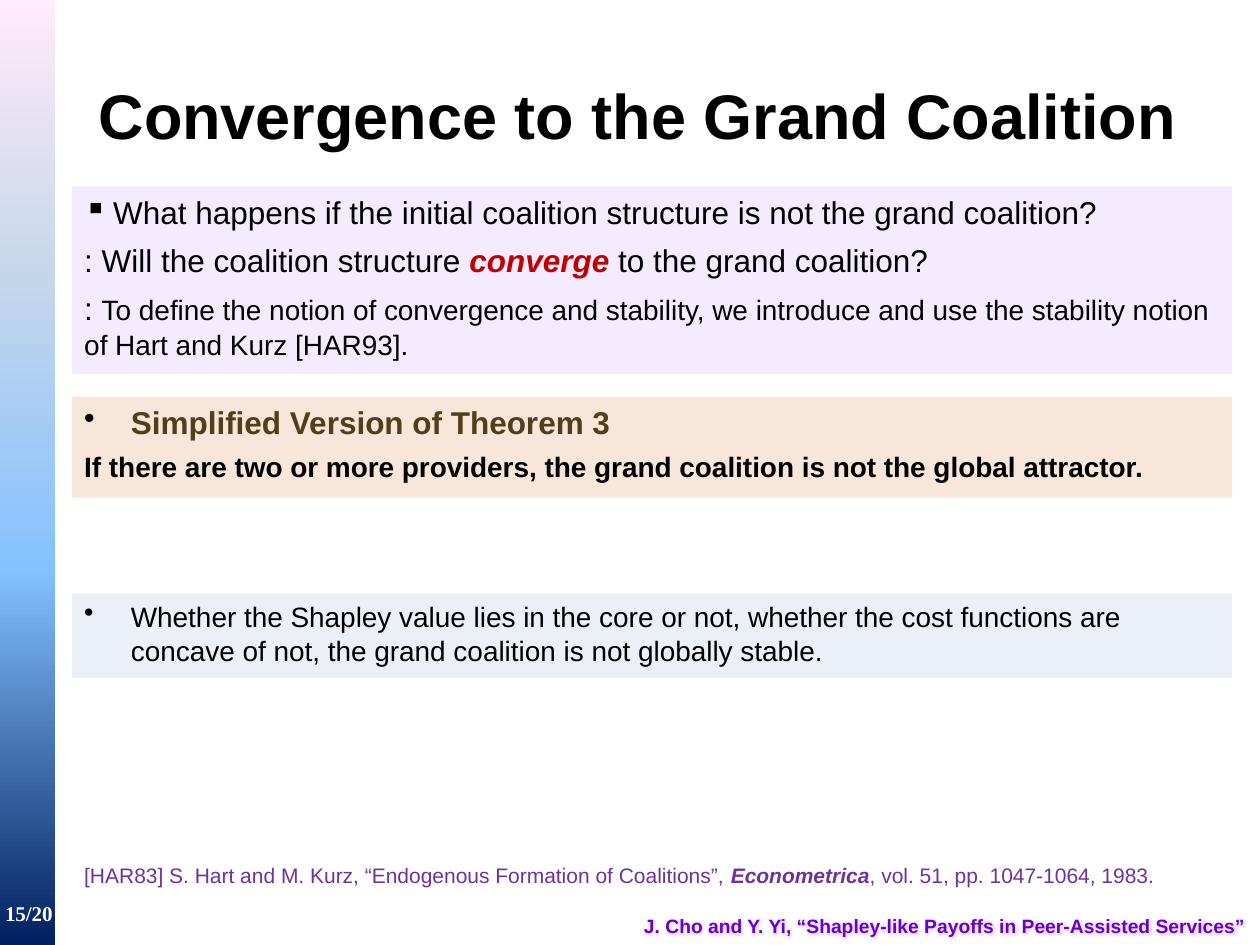
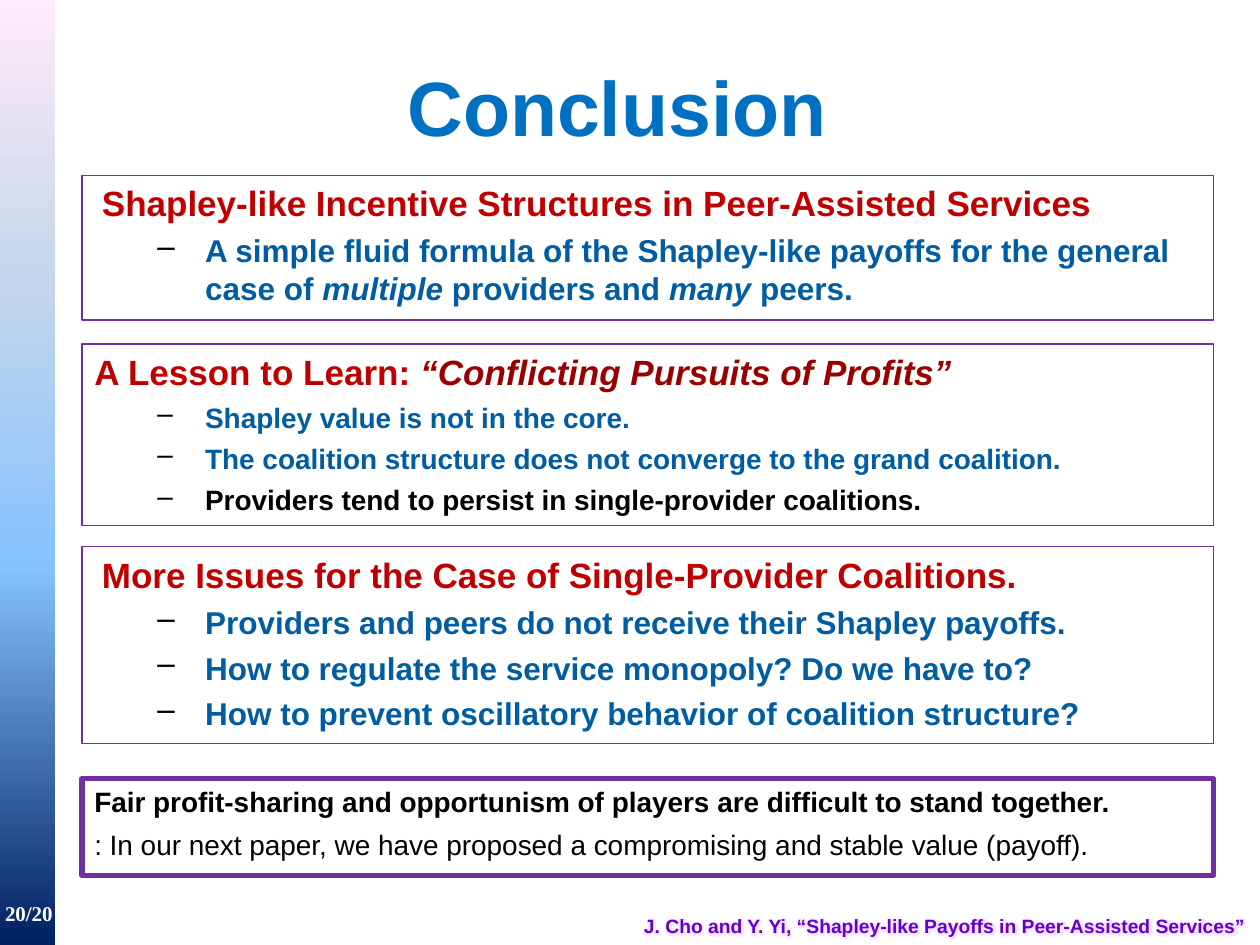
"""Builds two talk slides on coalitions: convergence and conclusion."""
from lxml import etree
from pptx import Presentation
from pptx import util as u
from pptx.dml import color
from pptx.enum import shapes, text
from pptx.oxml import ns

COLORS = {
    "black": "000000", "white": "FFFFFF", "red": "C00000", "maroon": "990000",
    "blue": "0070C0", "navy": "005DA2", "purple": "7030A0", "violet": "6600CC",
    "brown": "513E1B", "lilac": "F5EBFF", "peach": "F8E6DA", "ice": "EAF0F6",
    "glow": "E3B5FF",
}
BAND_STOPS = [(0, "002060"), (40, "85C2FF"), (70, "C4D6EB"), (100, "FFEBFA")]
FOOTER = "J. Cho and Y. Yi, “Shapley-like Payoffs in Peer-Assisted Services”"

PLAIN = {"margin": 0, "indent": 0, "before": 5}
SPACED = {**PLAIN, "before": 6}
SQUARE = {"margin": 0.23, "indent": -0.23, "before": 6, "bullet": "▪"}
DOT = {"margin": 0.37, "indent": -0.37, "before": 5, "bullet": "•"}
HEADING = {"margin": 0.44, "indent": -0.38, "before": 5}
LESSON = {"margin": 0.42, "indent": -0.42, "before": 5}
DASH = {"margin": 0.88, "indent": -0.38, "before": 4.5, "bullet": "–", "level": 1}


def run(words, size, tint="black", bold=False, italic=False, font="Arial"):
    return words, size, tint, bold, italic, font


def heading(words):
    return HEADING, [run(words, 20, "red", True)]


def point(words, size, tint="navy"):
    return DASH, [run(words, size, tint, True)]


CONVERGENCE = {
    "page": "15/20",
    "title": ("Convergence to the Grand Coalition", 36, "black", (0.5, 0.53, 9.12, 0.76)),
    "left": 0.57, "width": 9.21,
    "panels": [
        {"top": 1.48, "height": 1.49, "fill": "lilac", "lines": [
            (SQUARE, [run("What happens if the initial coalition structure is not the grand coalition?", 18)]),
            (SPACED, [run(": Will the coalition structure ", 18),
                      run("converge", 18, "red", True, True),
                      run(" to the grand coalition?", 18)]),
            (SPACED, [run(": ", 18),
                      run("To define the notion of convergence and stability, we introduce and use "
                          "the stability notion of Hart and Kurz [HAR93].", 16)]),
        ]},
        {"top": 3.15, "height": 0.8, "fill": "peach", "lines": [
            (DOT, [run("Simplified Version of Theorem 3", 18, "brown", True)]),
            (PLAIN, [run("If there are two or more providers, the grand coalition is not "
                         "the global attractor.", 16, bold=True)]),
        ]},
        {"top": 4.71, "height": 0.67, "fill": "ice", "lines": [
            (DOT, [run("Whether the Shapley value lies in the core or not, whether the cost functions "
                       "are concave of not, the grand coalition is not globally stable.", 16)]),
        ]},
    ],
    "reference": [
        run("[HAR83] S. Hart and M. Kurz, “Endogenous Formation of Coalitions”, ", 12, "purple"),
        run("Econometrica", 12, "purple", True, True),
        run(", vol. 51, pp. 1047-1064, 1983.", 12, "purple"),
    ],
}
CONCLUSION = {
    "page": "20/20",
    "title": ("Conclusion", 44, "blue", (0.75, 0.51, 8.3, 0.65)),
    "left": 0.65, "width": 8.98,
    "panels": [
        {"top": 1.39, "height": 1.15, "border": 0.75, "lines": [
            heading("Shapley-like Incentive Structures in Peer-Assisted Services"),
            (DASH, [run("A simple fluid formula of the Shapley-like payoffs for the general case of ",
                        18, "navy", True),
                    run("multiple", 18, "navy", True, True),
                    run(" providers and ", 18, "navy", True),
                    run("many", 18, "navy", True, True),
                    run(" peers.", 18, "navy", True)]),
        ]},
        {"top": 2.73, "height": 1.44, "border": 0.75, "lines": [
            (LESSON, [run("A Lesson to Learn: ", 20, "red", True),
                      run("“Conflicting Pursuits of Profits”", 20, "maroon", True, True)]),
            point("Shapley value is not in the core.", 16),
            point("The coalition structure does not converge to the grand coalition.", 16),
            point("Providers tend to persist in single-provider coalitions.", 16, "black"),
        ]},
        {"top": 4.34, "height": 1.56, "border": 0.75, "lines": [
            heading("More Issues for the Case of Single-Provider Coalitions."),
            point("Providers and peers do not receive their Shapley payoffs.", 18),
            point("How to regulate the service monopoly? Do we have to?", 18),
            point("How to prevent oscillatory behavior of coalition structure?", 18),
        ]},
        {"top": 6.18, "height": 0.77, "border": 3, "lines": [
            (PLAIN, [run("Fair profit-sharing and opportunism of players are difficult to stand "
                         "together.", 16, bold=True)]),
            (PLAIN, [run(": In our next paper, we have proposed a compromising and stable value "
                         "(payoff).", 16)]),
        ]},
    ],
}


def rgb(name):
    return color.RGBColor.from_string(COLORS[name])


def add_xml(parent, tag, **attributes):
    return etree.SubElement(parent, ns.qn(tag), attributes)


def write(holder, lines, align=text.PP_ALIGN.LEFT, anchor=text.MSO_ANCHOR.TOP):
    frame = holder.text_frame
    frame.word_wrap = True
    frame.vertical_anchor = anchor
    for position, (style, runs) in enumerate(lines):
        paragraph = frame.add_paragraph() if position else frame.paragraphs[0]
        properties = paragraph._p.get_or_add_pPr()
        properties.set("marL", str(u.Inches(style["margin"])))
        properties.set("indent", str(u.Inches(style["indent"])))
        if "bullet" in style:
            add_xml(add_xml(properties, "a:buClr"), "a:srgbClr", val=COLORS["black"])
            add_xml(properties, "a:buChar", char=style["bullet"])
        paragraph.level = style.get("level", 0)
        paragraph.alignment = align
        paragraph.space_before = u.Pt(style["before"] if position else 0)
        for words, size, tint, bold, italic, font in runs:
            part = paragraph.add_run()
            part.text = words
            part.font.size = u.Pt(size)
            part.font.bold = bold
            part.font.italic = italic
            part.font.name = font
            part.font.color.rgb = rgb(tint)


def add_label(slide, place, runs, align=text.PP_ALIGN.LEFT, anchor=text.MSO_ANCHOR.TOP):
    label = slide.shapes.add_textbox(*map(u.Inches, place))
    write(label, [(PLAIN, runs)], align, anchor)
    return label


def add_box(slide, *place):
    box = slide.shapes.add_shape(shapes.MSO_SHAPE.RECTANGLE, *map(u.Inches, place))
    box.shadow.inherit = False
    box.line.fill.background()
    return box


def add_band(slide):
    band = add_box(slide, 0, 0, 0.44, 7.5)
    band.fill.gradient()
    band.fill.gradient_angle = 90
    stops = band._element.spPr.find(".//" + ns.qn("a:gsLst"))
    stops.clear()
    for percent, tint in BAND_STOPS:
        stop = add_xml(stops, "a:gs", pos=str(percent * 1000))
        add_xml(stop, "a:srgbClr", val=tint)


def add_footer(slide):
    footer = add_label(slide, (5, 7.21, 5, 0.29), [run(FOOTER, 11, "violet", True)],
                       text.PP_ALIGN.CENTER)
    properties = footer.text_frame.paragraphs[0].runs[0]._r.rPr
    effects = etree.Element(ns.qn("a:effectLst"))
    glow = add_xml(effects, "a:glow", rad=str(u.Pt(4)))
    tint = add_xml(glow, "a:srgbClr", val=COLORS["glow"])
    add_xml(tint, "a:alpha", val="40000")
    properties.find(ns.qn("a:solidFill")).addnext(effects)


def add_panel(slide, left, width, panel):
    box = add_box(slide, left, panel["top"], width, panel["height"])
    if "fill" in panel:
        box.fill.solid()
        box.fill.fore_color.rgb = rgb(panel["fill"])
    else:
        box.fill.background()
        box.line.color.rgb = rgb("purple")
        box.line.width = u.Pt(panel["border"])
    write(box, panel["lines"])


def build_slide(deck, content):
    slide = deck.slides.add_slide(deck.slide_layouts[6])
    add_band(slide)
    add_label(slide, (-0.12, 7.1, 0.7, 0.25),
              [run(content["page"], 12, "white", True, font="Times New Roman")],
              text.PP_ALIGN.CENTER)
    add_footer(slide)
    words, size, tint, place = content["title"]
    add_label(slide, place, [run(words, size, tint, True)],
              text.PP_ALIGN.CENTER, text.MSO_ANCHOR.MIDDLE)
    for panel in content["panels"]:
        add_panel(slide, content["left"], content["width"], panel)
    if "reference" in content:
        add_label(slide, (0.57, 6.8, 9.03, 0.3), content["reference"])


def main():
    deck = Presentation()
    deck.slide_width, deck.slide_height = u.Inches(10), u.Inches(7.5)
    for content in (CONVERGENCE, CONCLUSION):
        build_slide(deck, content)
    deck.save("out.pptx")


if __name__ == "__main__":
    main()
